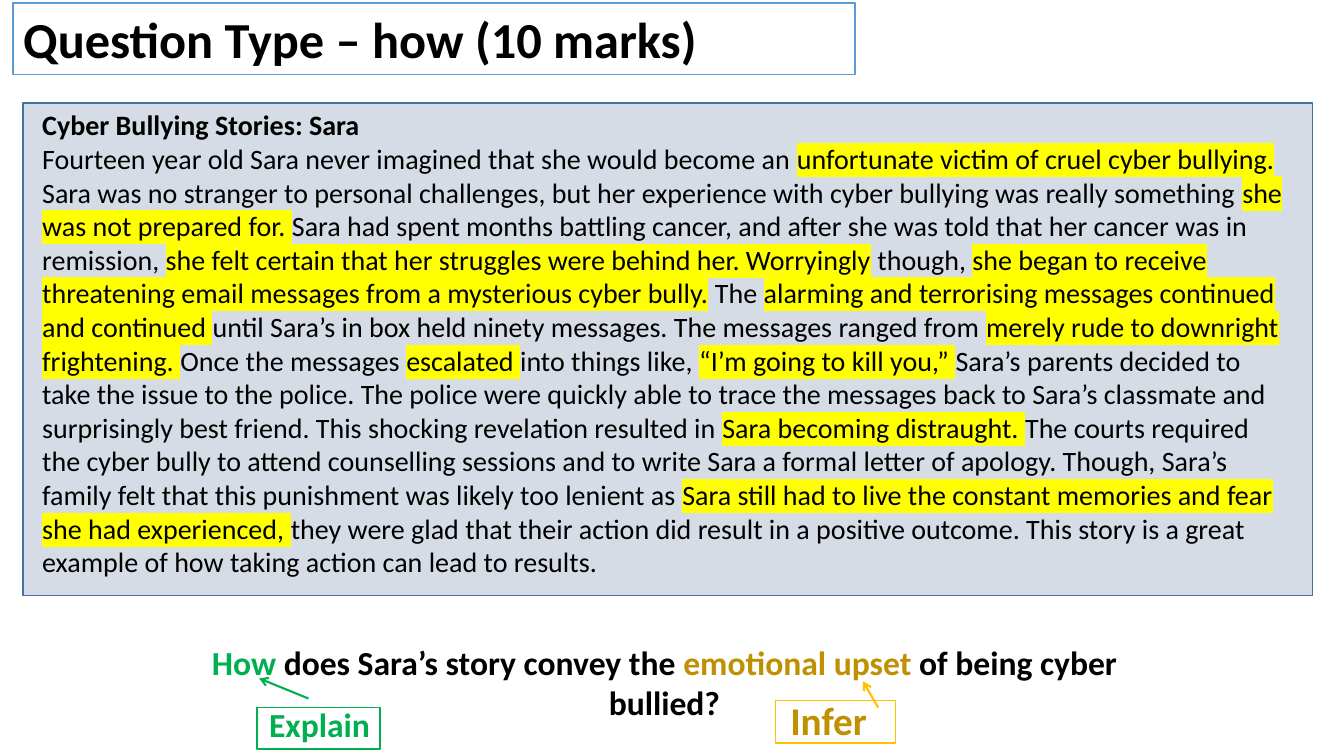
from dataclasses import dataclass

from lxml import etree
from pptx import Presentation
from pptx.dml.color import RGBColor
from pptx.enum.shapes import MSO_CONNECTOR, MSO_SHAPE
from pptx.enum.text import MSO_ANCHOR, MSO_AUTO_SIZE, PP_ALIGN
from pptx.oxml.ns import qn
from pptx.util import Inches, Pt

RECT = MSO_SHAPE.RECTANGLE
STRAIGHT = MSO_CONNECTOR.STRAIGHT
TOP = MSO_ANCHOR.TOP
NO_FIT = MSO_AUTO_SIZE.NONE
LEFT, CENTER = PP_ALIGN.LEFT, PP_ALIGN.CENTER


@dataclass(frozen=True)
class Theme:
    font: str = "Calibri"
    black: str = "000000"
    white: str = "FFFFFF"
    blue: str = "5B9BD5"
    panel: str = "D6DCE5"
    panel_edge: str = "43739E"
    green: str = "00B050"
    gold: str = "BF9000"
    amber: str = "FFC000"
    marker: str = "FFFF00"
    title: int = 36
    infer: int = 28
    question: int = 24
    body: int = 20


T = Theme()

TITLE = "Question Type – how (10 marks)"
STORY_HEADING = "Cyber Bullying Stories: Sara"
STORY = [
    ("Fourteen year old Sara never imagined that she would become an ",
     "unfortunate victim of cruel cyber bullying. "),
    ("Sara was no stranger to personal challenges, but her experience with "
     "cyber bullying was really something ",
     "she was not prepared for. "),
    ("Sara had spent months battling cancer, and after she was told that her "
     "cancer was in remission, ",
     "she felt certain that her struggles were behind her. Worryingly"),
    (" though, ",
     "she began to receive threatening email messages from a mysterious cyber bully."),
    (" The ", "alarming and terrorising messages continued and continued "),
    ("until Sara’s in box held ninety messages. The messages ranged from ",
     "merely rude to downright frightening. "),
    ("Once the messages ", "escalated "),
    ("into things like, ", "“I’m going to kill you,” "),
    ("Sara’s parents decided to take the issue to the police. The police were "
     "quickly able to trace the messages back to Sara’s classmate and "
     "surprisingly best friend. This shocking revelation resulted in ",
     "Sara becoming distraught. "),
    ("The courts required the cyber bully to attend counselling sessions and to "
     "write Sara a formal letter of apology. Though, Sara’s family felt that "
     "this punishment was likely too lenient as ",
     "Sara still had to live the constant memories and fear she had experienced, "),
    ("they were glad that their action did result in a positive outcome. This "
     "story is a great example of how taking action can lead to results.", ""),
]
QUESTION = [
    ("How", T.green),
    (" does Sara’s story convey the ", T.black),
    ("emotional upset ", T.gold),
    ("of being cyber bullied?", T.black),
]
LABELS = [
    {"text": "Infer", "size": T.infer, "color": T.gold, "line": T.amber,
     "frame": (7.69, 6.95, 1.19, 0.42), "at": (7.74, 6.86, 1.85, 0.57),
     "arrow": (8.71, 7.02, 8.56, 6.76)},
    {"text": "Explain", "size": T.question, "color": T.green, "line": T.green,
     "frame": (2.55, 7.02, 1.22, 0.41), "at": (2.57, 6.93, 1.31, 0.5),
     "arrow": (3.06, 6.93, 2.57, 6.73)},
]


def rgb(color):
    return RGBColor.from_string(color)


def add_text(p, text, size=T.body, color=T.black, bold=False, highlight=None):
    r = p.add_run()
    r.text = text
    r.font.name = T.font
    r.font.size = Pt(size)
    r.font.bold = bold
    r.font.color.rgb = rgb(color)
    if highlight:
        mark = etree.Element(qn("a:highlight"))
        etree.SubElement(mark, qn("a:srgbClr"), val=highlight)
        r._r.get_or_add_rPr().find(qn("a:solidFill")).addnext(mark)


def add_frame(s, at, line, fill=None):
    sp = s.shapes.add_shape(RECT, *map(Inches, at))
    sp.shadow.inherit = False
    sp.line.color.rgb = rgb(line)
    sp.line.width = Pt(1)
    if fill:
        sp.fill.solid()
        sp.fill.fore_color.rgb = rgb(fill)
    else:
        sp.fill.background()


def add_box(s, at, align=LEFT):
    tf = s.shapes.add_textbox(*map(Inches, at)).text_frame
    tf.word_wrap = True
    p = tf.paragraphs[0]
    p.alignment = align
    return tf, p


def add_arrow(s, ends, color):
    line = s.shapes.add_connector(STRAIGHT, *map(Inches, ends))
    line.line.color.rgb = rgb(color)
    line.line.width = Pt(1.5)
    etree.SubElement(line.line._get_or_add_ln(), qn("a:tailEnd"), type="arrow")
    etree.SubElement(line._element.spPr, qn("a:effectLst"))


def add_title(s):
    sp = s.shapes.title
    sp.left, sp.top, sp.width, sp.height = map(Inches, (0.13, 0.03, 8.35, 0.71))
    sp.fill.solid()
    sp.fill.fore_color.rgb = rgb(T.white)
    sp.line.color.rgb = rgb(T.blue)
    sp.line.width = Pt(1)
    tf = sp.text_frame
    tf.word_wrap = True
    tf.auto_size = NO_FIT
    tf.vertical_anchor = TOP
    p = tf.paragraphs[0]
    p.alignment = LEFT
    p.line_spacing = 1.0
    p.space_before = Pt(0)
    add_text(p, TITLE, size=T.title, bold=True)


def add_story(s):
    add_frame(s, (0.23, 1.02, 12.79, 4.89), T.panel_edge, T.panel)
    tf, p = add_box(s, (0.32, 1.02, 12.55, 4.81))
    add_text(p, STORY_HEADING, bold=True)
    p = tf.add_paragraph()
    p.space_after = Pt(10)
    for plain, marked in STORY:
        add_text(p, plain)
        if marked:
            add_text(p, marked, highlight=T.marker)


def add_question(s):
    tf, p = add_box(s, (1.63, 6.32, 9.92, 0.91), CENTER)
    for text, color in QUESTION:
        add_text(p, text, size=T.question, color=color, bold=True)
    for label in LABELS:
        add_frame(s, label["frame"], label["line"])
        tf, p = add_box(s, label["at"])
        add_text(p, label["text"], size=label["size"], color=label["color"], bold=True)
        add_arrow(s, label["arrow"], label["line"])


def main():
    prs = Presentation()
    prs.slide_width, prs.slide_height = Inches(13.33), Inches(7.5)
    s = prs.slides.add_slide(prs.slide_layouts[5])
    add_title(s)
    add_story(s)
    add_question(s)
    prs.save("out.pptx")


if __name__ == "__main__":
    main()
